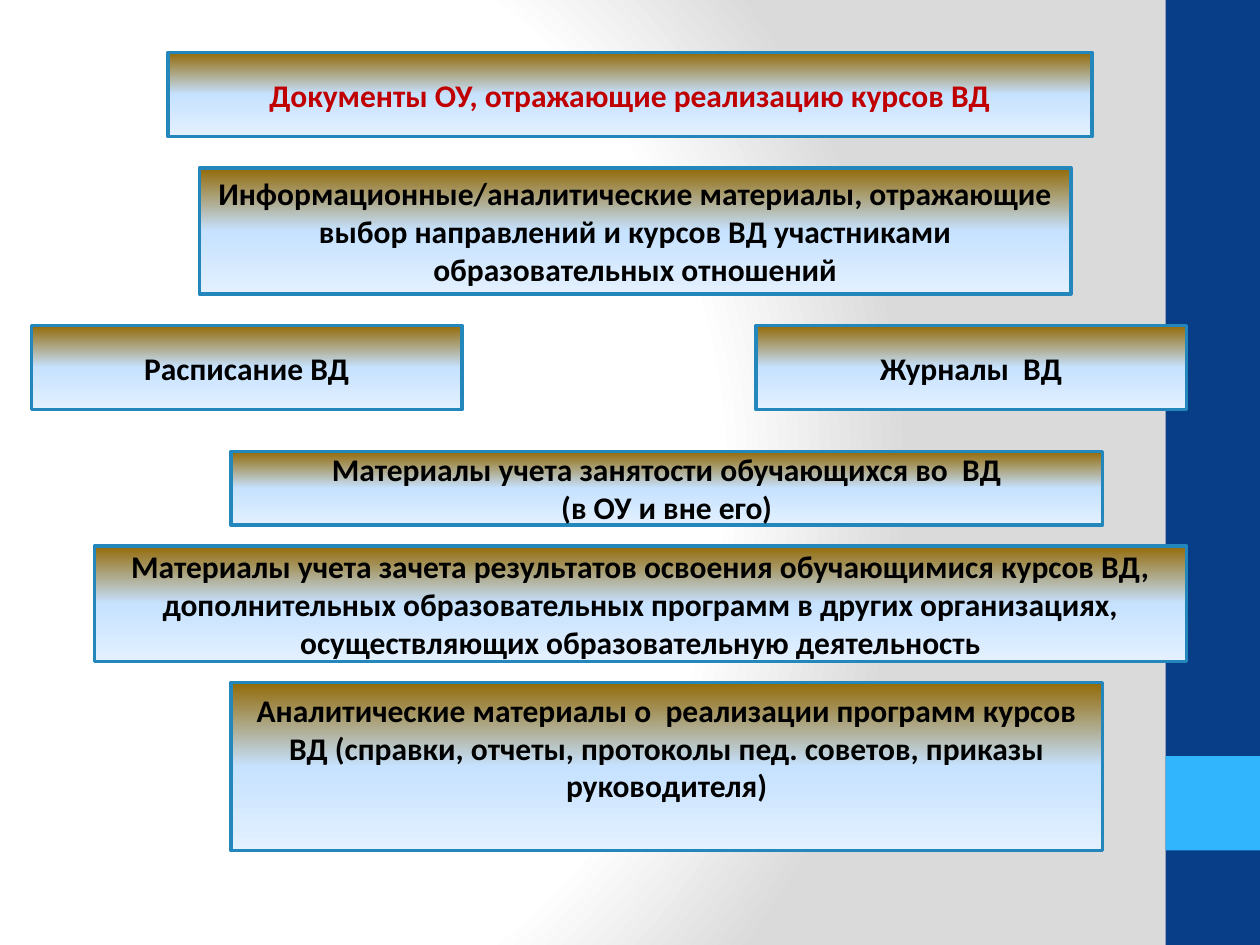
import pptx
import pptx.dml.color
import pptx.enum.shapes
import pptx.enum.text
import pptx.oxml
import pptx.oxml.ns
import pptx.util

Pt = pptx.util.Pt

COLORS = {
    "band": "073E87",
    "accent": "31B6FD",
    "border": "2487BB",
    "title": "C00000",
    "text": "000000",
    "white": "FFFFFF",
    "gray": "DADADA",
    "bronze": "936A08",
    "sky": "C6E2FF",
    "pale": "E3F0FF",
}
BACKGROUND_STOPS = [(0, "white"), (75, "white"), (100, "gray")]
BACKGROUND_SHADE = (
    '<a:path path="circle">'
    '<a:fillToRect l="20000" t="50000" r="100000" b="50000"/></a:path>'
)
BOX_STOPS = [(0, "bronze"), (50, "sky"), (100, "pale")]
BOX_SHADE = '<a:lin ang="5400000" scaled="0"/>'
FONT = {"name": "Calibri", "size": Pt(18), "bold": True}
FRAME = {"word_wrap": True, "vertical_anchor": pptx.enum.text.MSO_ANCHOR.MIDDLE}

TITLE = "Документы ОУ, отражающие реализацию курсов ВД"
TITLE_BOUNDS = (96, 30, 528, 48)
BOXES = [
    ("Расписание ВД", (18, 186, 246, 48), {}),
    ("Информационные/аналитические материалы, отражающие выбор направлений "
     "и курсов ВД участниками образовательных отношений",
     (114, 96, 498, 72), {}),
    ("Журналы  ВД", (432, 186, 246, 48), {}),
    ("Аналитические материалы о  реализации программ курсов ВД (справки, "
     "отчеты, протоколы пед. советов, приказы руководителя)",
     (132, 390, 498, 96), {"margin_bottom": Pt(25.2)}),
    ("Материалы учета занятости обучающихся во  ВД\n(в ОУ и вне его)",
     (132, 258, 498, 42), {}),
    ("Материалы учета зачета результатов освоения обучающимися курсов ВД, "
     "дополнительных образовательных программ в других организациях, "
     "осуществляющих образовательную деятельность",
     (54, 312, 624, 66), {}),
]


def rgb(name):
    return pptx.dml.color.RGBColor.from_string(COLORS[name])


def apply_format(target, values):
    for name, value in values.items():
        setattr(target, name, value)


def set_gradient(fill, element, stops, shade):
    fill.gradient()
    stop_xml = "".join(
        f'<a:gs pos="{position * 1000}"><a:srgbClr val="{COLORS[color]}"/></a:gs>'
        for position, color in stops
    )
    gradient = pptx.oxml.parse_xml(
        f'<a:gradFill {pptx.oxml.ns.nsdecls("a")} rotWithShape="1">'
        f"<a:gsLst>{stop_xml}</a:gsLst>{shade}</a:gradFill>"
    )
    current = element.find(".//" + pptx.oxml.ns.qn("a:gradFill"))
    current.getparent().replace(current, gradient)


def add_rectangle(slide, bounds):
    shape = slide.shapes.add_shape(
        pptx.enum.shapes.MSO_SHAPE.RECTANGLE, *map(Pt, bounds)
    )
    shape.shadow.inherit = False
    return shape


def add_band(slide, bounds, color):
    shape = add_rectangle(slide, bounds)
    shape.fill.solid()
    shape.fill.fore_color.rgb = rgb(color)
    shape.line.fill.background()


def format_box(shape, text, color, frame_values):
    set_gradient(shape.fill, shape._element, BOX_STOPS, BOX_SHADE)
    shape.line.color.rgb = rgb("border")
    shape.line.width = Pt(2)
    shape.text_frame.text = text
    apply_format(shape.text_frame, FRAME | frame_values)
    for paragraph in shape.text_frame.paragraphs:
        paragraph.alignment = pptx.enum.text.PP_ALIGN.CENTER
        for run in paragraph.runs:
            apply_format(run.font, FONT)
            run.font.color.rgb = rgb(color)


def format_title(slide):
    title = slide.shapes.title
    bounds = zip(("left", "top", "width", "height"), map(Pt, TITLE_BOUNDS))
    apply_format(title, dict(bounds))
    format_box(title, TITLE, "title", {})


def main():
    presentation = pptx.Presentation()
    apply_format(presentation, {"slide_width": Pt(720), "slide_height": Pt(540)})
    slide = presentation.slides.add_slide(presentation.slide_layouts[5])
    set_gradient(
        slide.background.fill, slide._element, BACKGROUND_STOPS, BACKGROUND_SHADE
    )
    format_title(slide)
    add_band(slide, (666, 0, 54, 540), "band")
    add_band(slide, (666, 432, 54, 54), "accent")
    for text, bounds, frame_values in BOXES:
        format_box(add_rectangle(slide, bounds), text, "text", frame_values)
    presentation.save("out.pptx")


if __name__ == "__main__":
    main()
